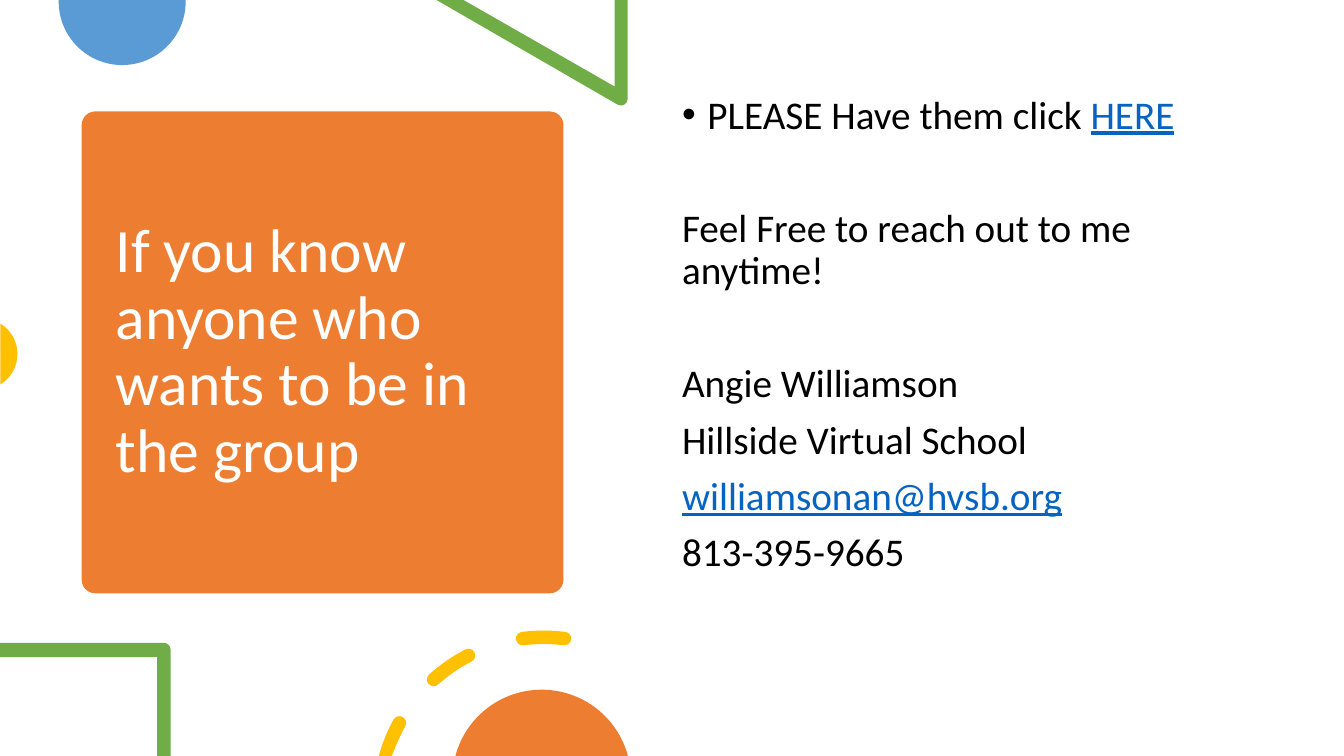
import math

from lxml import etree
from pptx import Presentation
from pptx import util as u
from pptx.dml.color import RGBColor
from pptx.enum import shapes, text
from pptx.oxml.ns import qn

WIDTH, HEIGHT = 33.87, 19.05
COLOURS = {
    "orange": "ED7D31",
    "blue": "5B9BD5",
    "green": "70AD47",
    "yellow": "FFC000",
    "link": "0563C1",
    "black": "000000",
    "white": "FFFFFF",
}


def polar(centre_x, centre_y, radius, angle):
    return (centre_x + radius * math.cos(angle), centre_y + radius * math.sin(angle))


def arc(centre_x, centre_y, radius, start, end, pieces=1):
    turn = math.radians(end - start) / pieces
    reach = 4 / 3 * math.tan(turn / 4) * radius
    angle = math.radians(start)
    nodes = [polar(centre_x, centre_y, radius, angle)]
    for _ in range(pieces):
        leaving = polar(*nodes[-1][-2:], reach, angle + math.pi / 2)
        angle += turn
        arrival = polar(centre_x, centre_y, radius, angle)
        nodes.append(leaving + polar(*arrival, -reach, angle + math.pi / 2) + arrival)
    return nodes


def dash(centre_x, centre_y, radius, half_width, start, end):
    def cap(angle, turn):
        middle = polar(centre_x, centre_y, radius, math.radians(angle))
        if middle[1] > HEIGHT:
            return []
        return arc(*middle, half_width, turn, turn + 180, 2)[1:]

    nodes = (
        arc(centre_x, centre_y, radius + half_width, start, end)
        + cap(end, end)
        + arc(centre_x, centre_y, radius - half_width, end, start)[1:]
        + cap(start, start + 180)
    )
    return [tuple(min(value, HEIGHT) for value in node) for node in nodes]


def write(paragraph, content, size=28, colour="black", font="Calibri", underline=False):
    run = paragraph.add_run()
    run.text = content
    run.font.size = u.Pt(size)
    run.font.name = font
    run.font.underline = underline
    run.font.color.rgb = RGBColor.from_string(COLOURS[colour])


class SlideBuilder:
    def __init__(self, presentation):
        self.slide = presentation.slides.add_slide(presentation.slide_layouts[5])

    def paint(self, shape, colour):
        shape.fill.solid()
        shape.fill.fore_color.rgb = RGBColor.from_string(COLOURS[colour])
        shape.line.fill.background()
        shape.shadow.inherit = False

    def card(self, box, colour, corner):
        shape = self.slide.shapes.add_shape(
            shapes.MSO_SHAPE.ROUNDED_RECTANGLE, *map(u.Cm, box))
        shape.adjustments[0] = corner
        self.paint(shape, colour)
        self.slide.shapes.title._element.addprevious(shape._element)

    def title(self, box, content):
        title = self.slide.shapes.title
        title.left, title.top, title.width, title.height = map(u.Cm, box)
        frame = title.text_frame
        frame.word_wrap = True
        frame.auto_size = text.MSO_AUTO_SIZE.NONE
        frame.vertical_anchor = text.MSO_ANCHOR.MIDDLE
        paragraph = frame.paragraphs[0]
        paragraph.alignment = text.PP_ALIGN.LEFT
        paragraph.line_spacing = 0.9
        write(paragraph, content, size=44, colour="white")

    def outline(self, colour, *contours):
        builder = self.slide.shapes.build_freeform(
            *map(u.Cm, contours[0][0]), scale=1.0)
        for index, contour in enumerate(contours):
            lengths = [u.Cm(value) for node in contour for value in node]
            points = list(zip(lengths[::2], lengths[1::2]))
            if index:
                builder.move_to(*points[0])
            builder.add_line_segments(points[1:], close=True)
        shape = builder.convert_to_shape()
        self.bend(shape, contours)
        self.paint(shape, colour)

    def bend(self, shape, contours):
        lines = iter(list(shape._element.iter(qn("a:lnTo"))))
        for contour in contours:
            for node in contour[1:]:
                line = next(lines)
                if len(node) == 6:
                    curve = etree.Element(qn("a:cubicBezTo"))
                    line.addprevious(curve)
                    for step in (line, next(lines), next(lines)):
                        curve.append(step[0])
                        step.getparent().remove(step)
            if len(contour[0]) == 2 and contour[0] == contour[-1]:
                next(lines, None)

    def body(self, box):
        frame = self.slide.shapes.add_textbox(*map(u.Cm, box)).text_frame
        frame.word_wrap = True
        return frame

    def paragraph(self, frame, *runs, first=False, bullet=False, space=10):
        paragraph = frame.paragraphs[0] if first else frame.add_paragraph()
        paragraph.line_spacing = 0.9
        paragraph.space_before = u.Pt(space)
        if bullet:
            properties = paragraph._p.get_or_add_pPr()
            indent = u.Cm(0.64)
            properties.set("marL", str(indent))
            properties.set("indent", str(-indent))
            etree.SubElement(properties, qn("a:buFont")).set("typeface", "Arial")
            etree.SubElement(properties, qn("a:buChar")).set("char", "•")
        for content, is_link in runs:
            write(paragraph, content, colour="link" if is_link else "black",
                  underline=is_link)


def main():
    presentation = Presentation()
    presentation.slide_width, presentation.slide_height = u.Cm(WIDTH), u.Cm(HEIGHT)
    builder = SlideBuilder(presentation)

    builder.card((2.06, 2.81, 12.14, 12.14), "orange", 0.028)
    builder.title((2.66, 3.09, 10.95, 11.58),
                  "If you know anyone who wants to be in the group")

    builder.outline("blue", [(4.68, 0)] + arc(3.08, 0.04, 1.6, 0, 180, 2) + [(1.48, 0)])
    builder.outline("green", [(15.82, 0), (15.49, 0), (15.49, 2.18), (11.68, 0), (11, 0)]
                    + arc(15.65, 2.49, 0.17, 120, 0, 2))
    builder.outline("yellow", arc(-0.46, 8.92, 0.9, -58.5, 58.5, 2))

    body = builder.body((16.94, 2.28, 14.6, 13.59))
    builder.paragraph(body, ("PLEASE Have them click ", False), ("HERE", True),
                      first=True, bullet=True)
    for content, is_link, space in (
        ("Feel Free to reach out to me anytime!", False, 50.5),
        ("Angie Williamson", False, 50.5),
        ("Hillside Virtual School", False, 10),
        ("williamsonan@hvsb.org", True, 10),
        ("813-395-9665", False, 10),
    ):
        builder.paragraph(body, (content, is_link), space=space)

    builder.outline("green", [(0, 16.2)] + arc(4.13, 16.37, 0.17, 270, 360)
                    + [(4.3, HEIGHT), (3.96, HEIGHT), (3.96, 16.56), (0, 16.56)])
    builder.outline("yellow", *(dash(13.7, 20.2, 4.14, 0.17, start, end)
                                for start, end in ((195.5, 208.6), (228, 242.8),
                                                   (262.7, 277.3))))
    builder.outline("orange", arc(13.65, 19.63, 2.25, 195, 345, 2))

    presentation.save("out.pptx")


if __name__ == "__main__":
    main()
